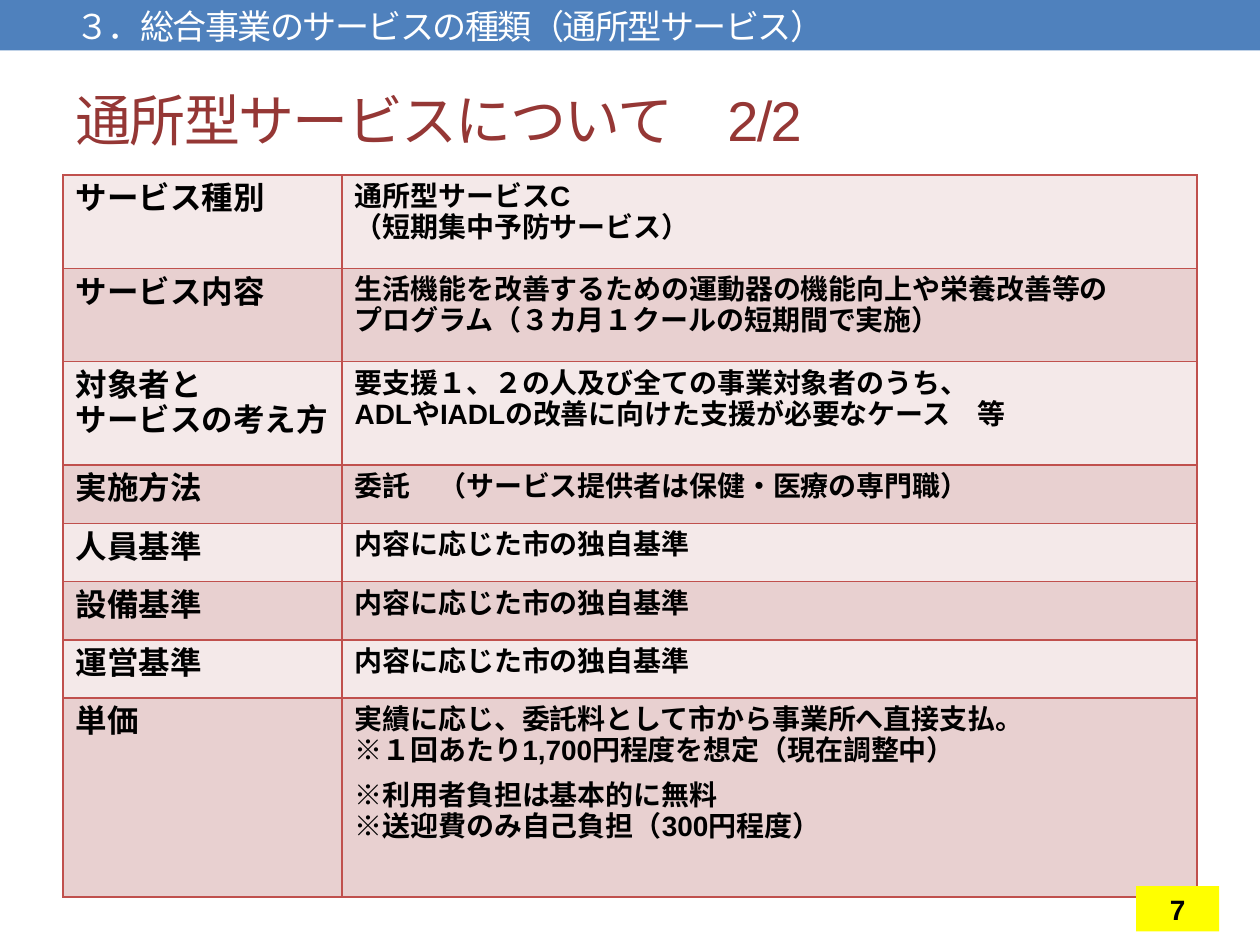
from typing import NamedTuple

from lxml import etree
from pptx import Presentation
from pptx.dml.color import RGBColor
from pptx.enum.shapes import MSO_SHAPE
from pptx.enum.text import MSO_ANCHOR, PP_ALIGN
from pptx.oxml.ns import qn
from pptx.util import Pt

RECT = MSO_SHAPE.RECTANGLE
MIDDLE = MSO_ANCHOR.MIDDLE
CENTER = PP_ALIGN.CENTER
FONT = "Arial"
COLORS = {
    "bar": "4F81BD",
    "title": "953735",
    "white": "FFFFFF",
    "black": "000000",
    "border": "C0504D",
    "light": "F4E9E9",
    "dark": "E8D0D0",
    "page": "FFFF00",
}


class Box(NamedTuple):
    left: float
    top: float
    width: float
    height: float


class Row(NamedTuple):
    label: list[str]
    details: list[str]
    height: float = 33.3
    gap_before: int | None = None  # index of the detail line set apart from those above


STANDARD = "内容に応じた市の独自基準"
ROWS = [
    Row(["サービス種別"], ["通所型サービスC", "（短期集中予防サービス）"], height=53.3),
    Row(["サービス内容"], ["生活機能を改善するための運動器の機能向上や栄養改善等の",
                     "プログラム（３カ月１クールの短期間で実施）"], height=53.3),
    Row(["対象者と", "サービスの考え方"], ["要支援１、２の人及び全ての事業対象者のうち、",
                               "ADLやIADLの改善に向けた支援が必要なケース　等"], height=59.2),
    Row(["実施方法"], ["委託　（サービス提供者は保健・医療の専門職）"]),
    Row(["人員基準"], [STANDARD]),
    Row(["設備基準"], [STANDARD]),
    Row(["運営基準"], [STANDARD]),
    Row(["単価"], ["実績に応じ、委託料として市から事業所へ直接支払。",
                 "※１回あたり1,700円程度を想定（現在調整中）",
                 "※利用者負担は基本的に無料",
                 "※送迎費のみ自己負担（300円程度）"], height=113.8, gap_before=2),
]


def rgb(name: str) -> RGBColor:
    return RGBColor.from_string(COLORS[name])


def style(p, size: float, color: str, bold: bool = False) -> None:
    p.font.name = FONT
    p.font.size = Pt(size)
    p.font.bold = bold
    p.font.color.rgb = rgb(color)


def add_rect(s, box: Box, fill: str):
    sp = s.shapes.add_shape(RECT, *map(Pt, box))
    sp.shadow.inherit = False
    sp.fill.solid()
    sp.fill.fore_color.rgb = rgb(fill)
    sp.line.fill.background()
    return sp


def add_heading(s, box: Box, text: str, size: float, color: str) -> None:
    """Add a vertically centred line of text, tracked 1 pt tighter."""
    tf = s.shapes.add_textbox(*map(Pt, box)).text_frame
    tf.word_wrap = True
    tf.vertical_anchor = MIDDLE
    p = tf.paragraphs[0]
    r = p.add_run()
    r.text = text
    style(p, size, color)
    r.font._element.set("spc", "-100")


def set_borders(cell) -> None:
    tc_pr = cell._tc.get_or_add_tcPr()
    for i, side in enumerate(("lnL", "lnR", "lnT", "lnB")):
        ln = etree.Element(qn(f"a:{side}"), w=str(Pt(1)))
        fill = etree.SubElement(ln, qn("a:solidFill"))
        etree.SubElement(fill, qn("a:srgbClr"), val=COLORS["border"])
        tc_pr.insert(i, ln)


def fill_cell(cell, lines: list[str], size: float, fill: str, gap_before: int | None = None) -> None:
    cell.fill.solid()
    cell.fill.fore_color.rgb = rgb(fill)
    set_borders(cell)
    tf = cell.text_frame
    tf.text = "\n".join(lines)
    for i, p in enumerate(tf.paragraphs):
        style(p, size, "black", bold=True)
        etree.SubElement(p.font._element, qn("a:ea"), typeface=FONT)
        if i == gap_before:
            p.space_before = Pt(8)


def add_service_table(s, left: float, top: float, widths: tuple[float, float]) -> None:
    box = Box(left, top, sum(widths), sum(row.height for row in ROWS))
    table = s.shapes.add_table(len(ROWS), len(widths), *map(Pt, box)).table
    table.first_row = False
    table.horz_banding = False
    for column, width in zip(table.columns, widths):
        column.width = Pt(width)
    for i, row in enumerate(ROWS):
        table.rows[i].height = Pt(row.height)
        fill = "dark" if i % 2 else "light"
        fill_cell(table.cell(i, 0), row.label, 18, fill)
        fill_cell(table.cell(i, 1), row.details, 16, fill, row.gap_before)


def add_page_number(s, box: Box, number: str) -> None:
    tf = add_rect(s, box, "page").text_frame
    tf.vertical_anchor = MIDDLE
    p = tf.paragraphs[0]
    p.text = number
    p.alignment = CENTER
    style(p, 16, "black", bold=True)


def main() -> None:
    prs = Presentation()
    prs.slide_width, prs.slide_height = Pt(720), Pt(540)
    s = prs.slides.add_slide(prs.slide_layouts[6])
    add_rect(s, Box(0, 0, 720, 28.8), "bar")
    add_heading(s, Box(36, 41.8, 648, 52.6), "通所型サービスについて　2/2", 32, "title")
    add_service_table(s, 36, 100, (159.5, 488.5))
    add_page_number(s, Box(649.2, 506.4, 47.5, 25.9), "7")
    add_heading(s, Box(36, 0, 648, 29.5), "３．総合事業のサービスの種類（通所型サービス）", 19.5, "white")
    prs.save("out.pptx")


if __name__ == "__main__":
    main()
